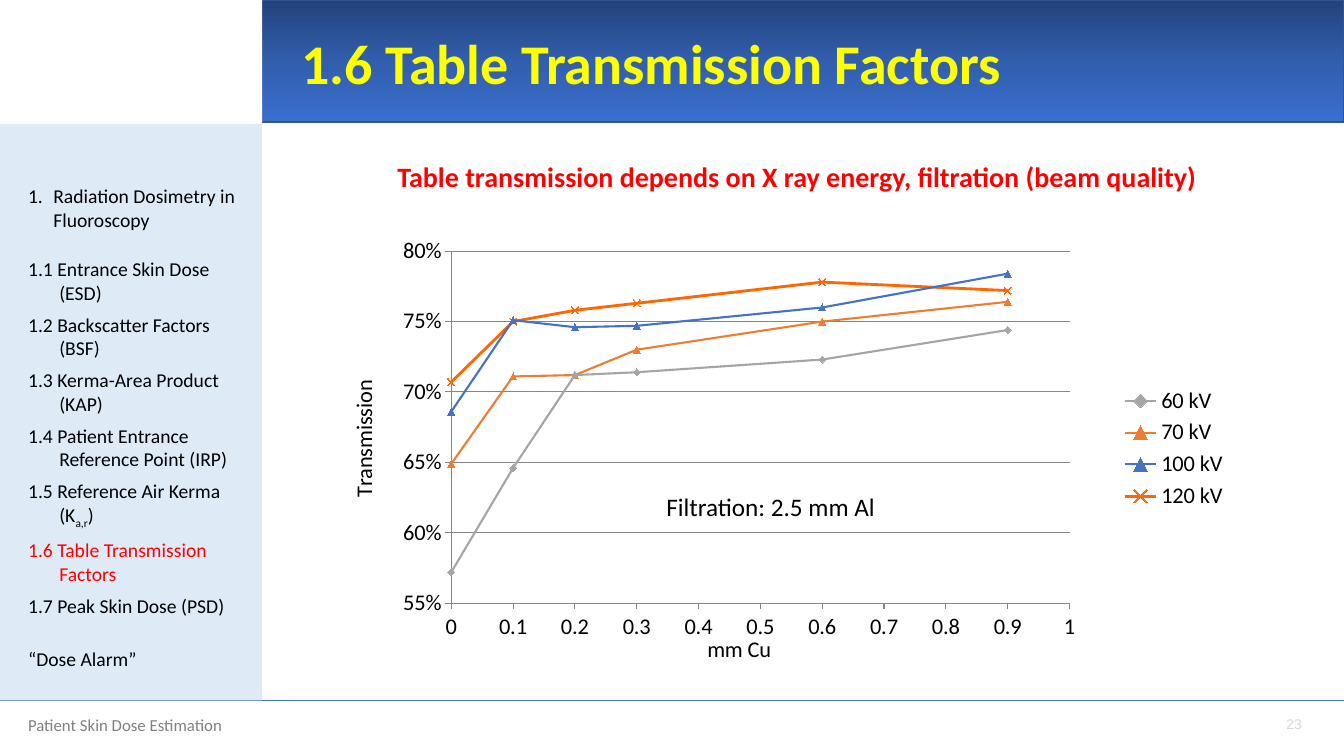
from copy import deepcopy
from dataclasses import dataclass
from lxml.etree import SubElement
from pptx import Presentation
from pptx.chart.data import XyChartData
from pptx.dml.color import RGBColor
from pptx.enum.chart import (XL_CHART_TYPE as CT, XL_LEGEND_POSITION as LEGEND,
                             XL_MARKER_STYLE as MARK, XL_TICK_MARK as TICK)
from pptx.enum.shapes import MSO_CONNECTOR as CONN, MSO_SHAPE as SHAPE
from pptx.enum.text import MSO_ANCHOR as ANCHOR, PP_ALIGN as ALIGN
from pptx.oxml.ns import qn
from pptx.util import Inches, Pt


@dataclass(frozen=True)
class Theme:
    font: str = "Calibri"
    number_font: str = "Arial"
    text: str = "000000"
    accent: str = "FF0000"
    title: str = "FFFF00"
    footer: str = "808080"
    number: str = "D5D7D8"
    white: str = "FFFFFF"
    sidebar: str = "DEEBF7"
    rule: str = "4472C4"
    banner: tuple = ("23427A", "315EAD", "3A6FCE")
    banner_line: str = "325491"
    grid: str = "868686"
    title_size: int = 40
    heading_size: int = 20
    note_size: int = 18
    chart_size: int = 16
    body_size: int = 14
    footer_size: int = 12
    number_size: int = 10


T = Theme()
FILTERS = (0, 0.1, 0.2, 0.3, 0.6, 0.9)
# name, colour, line width, marker, transmission per filter
CURVES = (
    ("60 kV", "A5A5A5", 1.5, MARK.DIAMOND, (0.572, 0.646, 0.712, 0.714, 0.723, 0.744)),
    ("70 kV", "ED7D31", 1.5, MARK.TRIANGLE, (0.649, 0.711, 0.712, 0.73, 0.75, 0.764)),
    ("100 kV", "4472C4", 1.5, MARK.TRIANGLE, (0.686, 0.751, 0.746, 0.747, 0.76, 0.784)),
    ("120 kV", "FF6600", 2, MARK.X, (0.707, 0.75, 0.758, 0.763, 0.778, 0.772)),
)
# text, space before, colour; a "|" sets off the subscript
CONTENTS = (
    ("Radiation Dosimetry in Fluoroscopy", 0, T.text),
    ("1.1 Entrance Skin Dose (ESD)", 18.5, T.text),
    ("1.2 Backscatter Factors (BSF)", 6, T.text),
    ("1.3 Kerma-Area Product (KAP)", 6, T.text),
    ("1.4 Patient Entrance Reference Point (IRP)", 6, T.text),
    ("1.5 Reference Air Kerma (K|a,r|)", 6, T.text),
    ("1.6 Table Transmission Factors", 6, T.accent),
    ("1.7 Peak Skin Dose (PSD)", 6, T.text),
    ("“Dose Alarm”", 21.5, T.text),
)


def rgb(value):
    return RGBColor.from_string(value)


def set_font(font, size, color=T.text, bold=False, name=T.font):
    for key, value in dict(name=name, size=Pt(size), bold=bold).items():
        setattr(font, key, value)
    font.color.rgb = rgb(color)


def add_rect(s, box, fill=None, line=None):
    sp = s.shapes.add_shape(SHAPE.RECTANGLE, *map(Inches, box))
    sp.shadow.inherit = False
    if fill:
        sp.fill.solid()
        sp.fill.fore_color.rgb = rgb(fill)
    if line:
        sp.line.color.rgb = rgb(line)
        sp.line.width = Pt(1)
    else:
        sp.line.fill.background()
    return sp


def add_text(s, box, text="", align=ALIGN.LEFT, anchor=ANCHOR.TOP, **font):
    tf = s.shapes.add_textbox(*map(Inches, box)).text_frame
    tf.word_wrap = True
    tf.vertical_anchor = anchor
    if text:
        p = tf.paragraphs[0]
        p.alignment = align
        r = p.add_run()
        r.text = text
        set_font(r.font, **font)
    return tf


def add_footer(s, box):
    x, y, w, h = box
    line = s.shapes.add_connector(CONN.STRAIGHT, *map(Inches, (x, y, x + w, y)))
    line.line.color.rgb = rgb(T.rule)
    line.line.width = Pt(0.5)
    SubElement(line._element.spPr, qn("a:effectLst"))
    add_text(s, (x + 0.18, y + 0.09, 4.5, 0.4), "Patient Skin Dose Estimation",
             size=T.footer_size, color=T.footer)
    add_text(s, (x + w - 3.32, y + 0.03, 3, 0.4), "23", ALIGN.RIGHT, ANCHOR.MIDDLE,
             size=T.number_size, color=T.number, name=T.number_font)


def add_banner(s, box, corner_width):
    x, y, w, h = box
    sp = add_rect(s, box, line=T.banner_line)
    sp.fill.gradient()
    sp.fill.gradient_angle = 270
    # a third stop between the two default ones
    first = sp._element.spPr.find(".//" + qn("a:gs"))
    first.addnext(deepcopy(first))
    for i, (stop, color) in enumerate(zip(sp.fill.gradient_stops, T.banner)):
        stop.position = i / 2
        stop.color.rgb = rgb(color)
    add_rect(s, (x, y, corner_width, h + 0.02), T.white)
    tf = add_text(s, (x + corner_width + 0.29, y + 0.24, w - corner_width - 0.52, 0.83),
                  "1.6 Table Transmission Factors", anchor=ANCHOR.MIDDLE,
                  size=T.title_size, color=T.title, bold=True)
    tf.paragraphs[0].line_spacing = 0.9


def add_sidebar(s, box):
    x, y, w, h = box
    add_rect(s, box, T.sidebar)
    tf = add_text(s, (x + 0.18, y + 0.57, w - 0.29, h - 0.6))
    for i, (text, before, color) in enumerate(CONTENTS):
        p = tf.add_paragraph() if i else tf.paragraphs[0]
        indent = Inches(0.31 if i else 0.25)
        pPr = p._p.get_or_add_pPr()
        pPr.set("marL", str(indent))
        pPr.set("indent", str(-indent))
        p.space_before = Pt(before)
        if i == 0:
            SubElement(pPr, qn("a:buFont"), typeface="+mj-lt")
            SubElement(pPr, qn("a:buAutoNum"), type="arabicPeriod")
        for j, part in enumerate(text.split("|")):
            r = p.add_run()
            r.text = part
            set_font(r.font, T.body_size, color)
            if j % 2:
                r.font._element.set("baseline", "-25000")


def format_axis(axis, title, **scale):
    for key, value in scale.items():
        setattr(axis, key, value)
    axis.major_tick_mark = TICK.OUTSIDE
    axis.format.line.color.rgb = rgb(T.grid)
    tf = axis.axis_title.text_frame
    tf.text = title
    set_font(tf.paragraphs[0].runs[0].font, T.chart_size)


def add_transmission_chart(s, box):
    data = XyChartData()
    for name, _, _, _, values in CURVES:
        series = data.add_series(name)
        for x, y in zip(FILTERS, values):
            series.add_data_point(x, y)
    chart = s.shapes.add_chart(CT.XY_SCATTER_LINES, *map(Inches, box), data).chart
    set_font(chart.font, T.chart_size)
    chart.has_title = False
    chart.has_legend = True
    chart.legend.position = LEGEND.RIGHT
    chart.legend.include_in_layout = False
    plot = chart.plots[0]
    plot.vary_by_categories = False
    for series, (_, color, width, mark, _) in zip(plot.series, CURVES):
        series.smooth = False
        series.format.line.width = Pt(width)
        series.marker.style, series.marker.size = mark, 5
        marker = series.marker.format
        for line in (series.format.line, marker.line):
            line.color.rgb = rgb(color)
        marker.fill.solid()
        marker.fill.fore_color.rgb = rgb(color)
    # axes
    format_axis(chart.category_axis, "mm Cu", minimum_scale=0, maximum_scale=1,
                major_unit=0.1, has_major_gridlines=False)
    format_axis(chart.value_axis, "Transmission", minimum_scale=0.55, maximum_scale=0.8,
                major_unit=0.05, has_major_gridlines=True)
    chart.category_axis.tick_labels.number_format = "General"
    chart.value_axis.tick_labels.number_format = "0%"
    for axis in (chart.category_axis, chart.value_axis):
        axis.tick_labels.number_format_is_linked = False
    chart.value_axis.major_gridlines.format.line.color.rgb = rgb(T.grid)
    # fixed inner plot area
    area = chart._chartSpace.chart.plotArea
    for old in area.findall(qn("c:layout")):
        area.remove(old)
    layout = SubElement(area, qn("c:layout"))
    area.insert(0, layout)
    manual = SubElement(layout, qn("c:manualLayout"))
    for tag, value in dict(layoutTarget="inner", xMode="edge", yMode="edge",
                           x=0.127, y=0.055, w=0.686, h=0.794).items():
        SubElement(manual, qn("c:" + tag), val=str(value))


def add_content(s, box):
    x, y, w, h = box
    add_transmission_chart(s, (x + 0.74, y + 1.04, 8.94, 4.4))
    add_text(s, (x + 3.91, y + 3.62, 2.59, 0.4), "Filtration: 2.5 mm Al", size=T.note_size)
    add_text(s, (x + 0.39, y + 0.32, w - 0.9, 0.44),
             "Table transmission depends on X ray energy, filtration (beam quality)",
             ALIGN.CENTER, size=T.heading_size, color=T.accent, bold=True)


def main():
    prs = Presentation()
    width, height, side, top, bottom = 13.33, 7.5, 2.6, 1.21, 6.95
    prs.slide_width, prs.slide_height = Inches(width), Inches(height)
    s = prs.slides.add_slide(prs.slide_layouts[6])
    add_footer(s, (0, bottom, width, height - bottom))
    add_sidebar(s, (0, top, side, bottom - top))
    add_banner(s, (0, 0, width, top), side)
    add_content(s, (side, top, width - side, bottom - top))
    prs.save("out.pptx")


if __name__ == "__main__":
    main()
